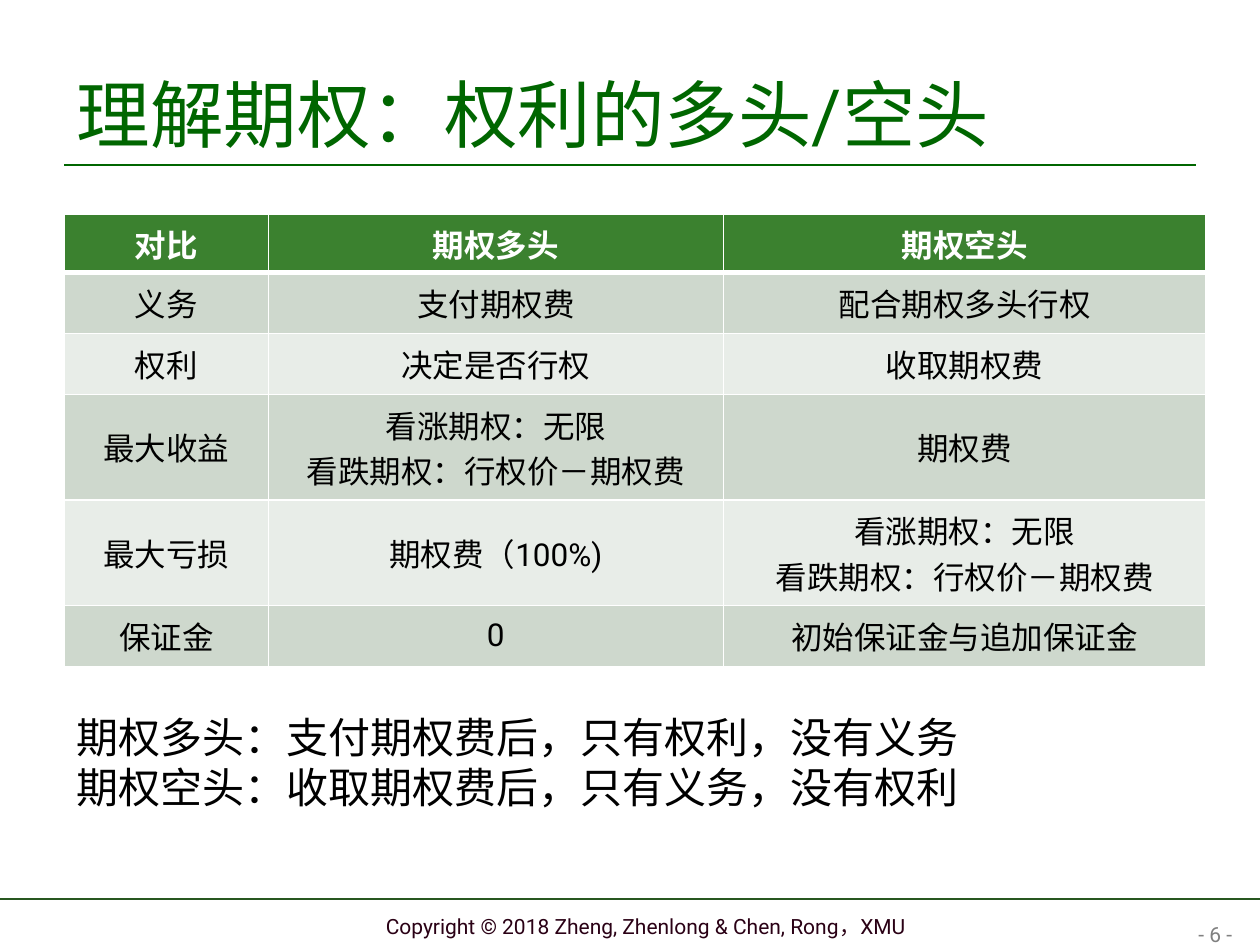
import pptx
import pptx.util
import pptx.dml.color
import pptx.enum.shapes
import pptx.enum.text
import pptx.oxml
import pptx.oxml.ns
from lxml import etree

Cm, Pt = pptx.util.Cm, pptx.util.Pt
RGBColor = pptx.dml.color.RGBColor
ALIGN, ANCHOR = pptx.enum.text.PP_ALIGN, pptx.enum.text.MSO_ANCHOR

WHITE = RGBColor(0xFF, 0xFF, 0xFF)
BLACK = RGBColor(0, 0, 0)
GREY = RGBColor(0x80, 0x80, 0x80)
TITLE_GREEN = RGBColor(0x00, 0x66, 0x00)
FOOTER_GREEN = RGBColor(0x28, 0x57, 0x20)
FOOTER_TEXT = RGBColor(0x2A, 0x00, 0x15)
HEADER_FILL = RGBColor(0x3B, 0x81, 0x2F)
BAND_FILLS = (RGBColor(0xCE, 0xD8, 0xCD), RGBColor(0xE8, 0xED, 0xE8))

TITLE = "理解期权：权利的多头/空头"
PUT_AND_CALL = "看涨期权：无限\n看跌期权：行权价－期权费"
COMPARISON = [
    ("对比", "期权多头", "期权空头"),
    ("义务", "支付期权费", "配合期权多头行权"),
    ("权利", "决定是否行权", "收取期权费"),
    ("最大收益", PUT_AND_CALL, "期权费"),
    ("最大亏损", "期权费（100%)", PUT_AND_CALL),
    ("保证金", "0", "初始保证金与追加保证金"),
]
COLUMN_WIDTHS = (4.11, 9.17, 9.73)
HEADER_HEIGHT, LINE_HEIGHT, TWO_LINE_HEIGHT = 1.17, 1.23, 2.13
SUMMARY = ("期权多头：支付期权费后，只有权利，没有义务\n"
           "期权空头：收取期权费后，只有义务，没有权利")
COPYRIGHT = "Copyright © 2018 Zheng, Zhenlong & Chen, Rong，XMU"
PAGE = "- 6 -"

LEFT = 1.3
SLIDE_WIDTH, SLIDE_HEIGHT = 25.4, 19.05


def fill_text(frame, text, size, color, font="Roboto", align=ALIGN.LEFT, bold=False):
    frame.text = text
    for paragraph in frame.paragraphs:
        paragraph.alignment = align
        paragraph.font.name = font
        paragraph.font.size = Pt(size)
        paragraph.font.bold = bold
        paragraph.font.color.rgb = color


def add_text(slide, box, text, size, color, anchor=ANCHOR.BOTTOM, **style):
    frame = slide.shapes.add_textbox(*map(Cm, box)).text_frame
    frame.word_wrap = True
    frame.vertical_anchor = anchor
    fill_text(frame, text, size, color, **style)
    return frame


def add_rule(slide, left, right, y, color):
    rule = slide.shapes.add_connector(
        pptx.enum.shapes.MSO_CONNECTOR.STRAIGHT, Cm(left), Cm(y), Cm(right), Cm(y))
    rule.line.color.rgb = color
    rule.line.width = Pt(1)
    etree.SubElement(rule._element.spPr, pptx.oxml.ns.qn("a:effectLst"))


def set_borders(cell, top, bottom):
    """Draw white borders; top and bottom are widths in points, the sides are 1."""
    properties = cell._tc.get_or_add_tcPr()
    for place, (side, width) in enumerate(zip("LRTB", (1, 1, top, bottom))):
        properties.insert(place, pptx.oxml.parse_xml(
            f'<a:ln{side} {pptx.oxml.ns.nsdecls("a")} w="{Pt(width)}">'
            f'<a:solidFill><a:srgbClr val="{WHITE}"/></a:solidFill></a:ln{side}>'))


def add_comparison(slide):
    heights = [HEADER_HEIGHT] + [
        TWO_LINE_HEIGHT if PUT_AND_CALL in row else LINE_HEIGHT for row in COMPARISON[1:]]
    table = slide.shapes.add_table(
        len(COMPARISON), len(COLUMN_WIDTHS), Cm(LEFT), Cm(4.32),
        Cm(sum(COLUMN_WIDTHS)), Cm(sum(heights))).table
    for column, width in zip(table.columns, COLUMN_WIDTHS):
        column.width = Cm(width)
    for r, (row, height) in enumerate(zip(COMPARISON, heights)):
        table.rows[r].height = Cm(height)
        header = r == 0
        for c, text in enumerate(row):
            cell = table.cell(r, c)
            cell.vertical_anchor = ANCHOR.MIDDLE
            fill_text(cell.text_frame, text, 18, WHITE if header else BLACK,
                      align=ALIGN.CENTER, bold=header)
            cell.fill.solid()
            cell.fill.fore_color.rgb = HEADER_FILL if header else BAND_FILLS[(r - 1) % 2]
            set_borders(cell, top=3 if r == 1 else 1, bottom=3 if header else 1)


def main():
    deck = pptx.Presentation()
    deck.slide_width, deck.slide_height = Cm(SLIDE_WIDTH), Cm(SLIDE_HEIGHT)
    slide = deck.slides.add_slide(deck.slide_layouts[6])

    add_rule(slide, 0, SLIDE_WIDTH, 18.13, FOOTER_GREEN)
    add_rule(slide, LEFT, SLIDE_WIDTH - LEFT, 3.33, TITLE_GREEN)
    add_text(slide, (7.11, 18.26, 11.81, 0.79), COPYRIGHT, 12, FOOTER_TEXT,
             align=ALIGN.CENTER)
    title = add_text(slide, (LEFT, 0.91, 22.86, 2.36), TITLE, 42, TITLE_GREEN)
    title.margin_bottom = Cm(0.1)
    add_comparison(slide)
    add_text(slide, (20.09, 18.31, 5, 0.91), PAGE, 12, GREY, align=ALIGN.RIGHT)
    add_text(slide, (LEFT, 14.22, 21.21, 2.31), SUMMARY, 24, BLACK,
             anchor=ANCHOR.TOP, font="Lato")
    deck.save("out.pptx")


if __name__ == "__main__":
    main()
